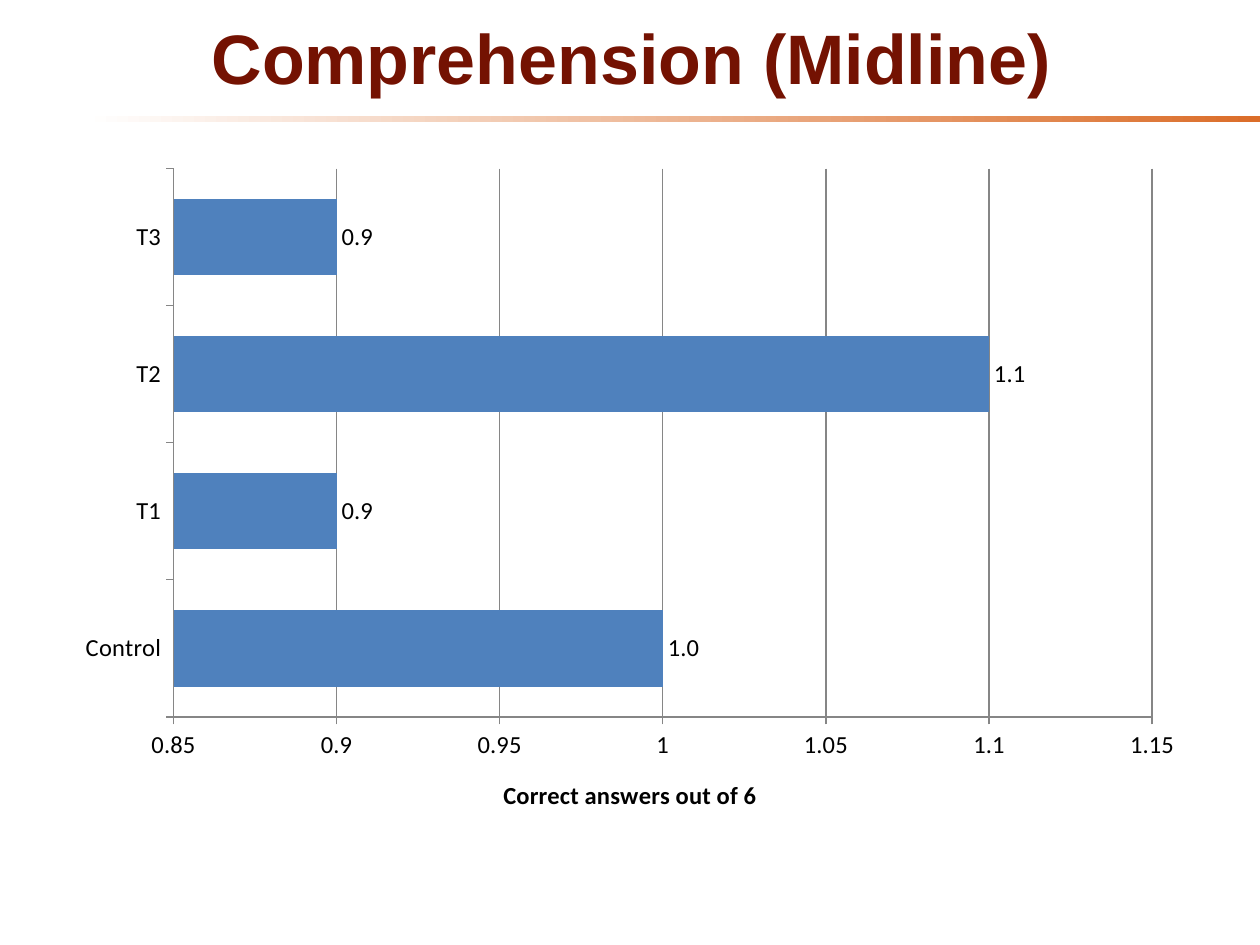
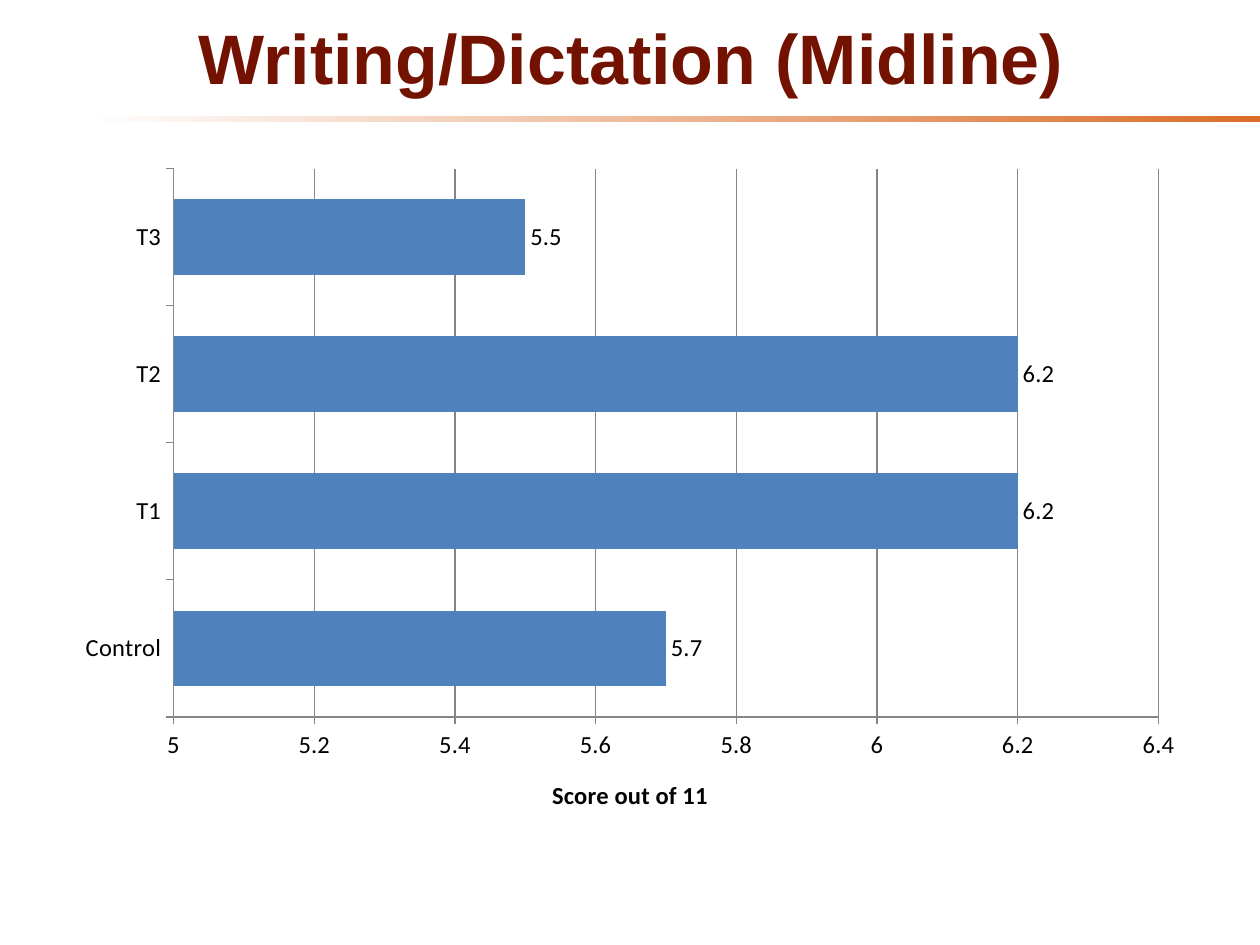
from pptx import Presentation
from pptx.chart.data import CategoryChartData
from pptx.dml.color import RGBColor
from pptx.enum.chart import XL_CHART_TYPE, XL_LABEL_POSITION, XL_TICK_MARK
from pptx.enum.shapes import MSO_SHAPE
from pptx.enum.text import MSO_ANCHOR, MSO_AUTO_SIZE, PP_ALIGN
from pptx.util import Inches, Pt

GROUPS = ["Control", "T1", "T2", "T3"]
RESULTS = [
    {
        "title": "Comprehension (Midline)",
        "measure": "Correct answers out of 6",
        "scores": [1.0, 0.9, 1.1, 0.9],
        "scale": (0.85, 1.15, 0.05),
        "gap": 80,
    },
    {
        "title": "Writing/Dictation (Midline)",
        "measure": "Score out of 11",
        "scores": [5.7, 6.2, 6.2, 5.5],
        "scale": (5, 6.4, 0.2),
        "gap": 81,
    },
]

MAROON, ORANGE, WHITE = "741202", "DB6D29", "FFFFFF"
BAR_BLUE, AXIS_GRAY, BLACK = "4F81BD", "868686", "000000"
TITLE_BOX = (0.51, 0.05, 9, 0.79)
BAND_BOX = (0.67, 0.92, 9.33, 0.05)
CHART_BOX = (0.5, 1.23, 9, 5.43)


def color(hex_string):
    return RGBColor.from_string(hex_string)


def box(lengths):
    return [Inches(length) for length in lengths]


def style_font(font, name, size, hex_string, bold=False):
    font.name = name
    font.size = Pt(size)
    font.bold = bold
    font.color.rgb = color(hex_string)


def style_line(line):
    line.color.rgb = color(AXIS_GRAY)
    line.width = Pt(0.75)


def add_heading(slide, wording):
    heading = slide.shapes.title
    heading.left, heading.top, heading.width, heading.height = box(TITLE_BOX)
    frame = heading.text_frame
    frame.text = wording
    frame.auto_size = MSO_AUTO_SIZE.NONE
    frame.vertical_anchor = MSO_ANCHOR.MIDDLE
    paragraph = frame.paragraphs[0]
    paragraph.alignment = PP_ALIGN.CENTER
    style_font(paragraph.runs[0].font, "Arial", 40, MAROON, bold=True)


def add_band(slide):
    band = slide.shapes.add_shape(MSO_SHAPE.RECTANGLE, *box(BAND_BOX))
    band.shadow.inherit = False
    band.line.fill.background()
    band.fill.gradient()
    band.fill.gradient_angle = 0
    for stop, shade in zip(band.fill.gradient_stops, (WHITE, ORANGE)):
        stop.color.rgb = color(shade)


def add_scores(slide, result):
    data = CategoryChartData(number_format="0.0")
    data.categories = GROUPS
    data.add_series("Series 1", result["scores"])
    chart = slide.shapes.add_chart(
        XL_CHART_TYPE.BAR_CLUSTERED, *box(CHART_BOX), data
    ).chart
    chart.has_legend = False
    chart.has_title = False
    style_font(chart.font, "Calibri", 14, BLACK)

    for axis in (chart.category_axis, chart.value_axis):
        axis.major_tick_mark = XL_TICK_MARK.OUTSIDE
        axis.minor_tick_mark = XL_TICK_MARK.NONE
        style_line(axis.format.line)
    chart.category_axis.has_major_gridlines = False

    score_axis = chart.value_axis
    score_axis.minimum_scale, score_axis.maximum_scale, score_axis.major_unit = result["scale"]
    score_axis.tick_labels.number_format = "General"
    score_axis.tick_labels.number_format_is_linked = False
    score_axis.has_major_gridlines = True
    style_line(score_axis.major_gridlines.format.line)
    measure = score_axis.axis_title.text_frame
    measure.text = result["measure"]
    style_font(measure.paragraphs[0].runs[0].font, "Calibri", 14, BLACK, bold=True)

    plot = chart.plots[0]
    plot.gap_width = result["gap"]
    plot.vary_by_categories = False
    bars = plot.series[0]
    bars.format.fill.solid()
    bars.format.fill.fore_color.rgb = color(BAR_BLUE)
    labels = bars.data_labels
    labels.show_value = True
    labels.number_format = "#,##0.0"
    labels.number_format_is_linked = False
    labels.position = XL_LABEL_POSITION.OUTSIDE_END
    style_font(labels.font, "Calibri", 14, BLACK)


def main():
    deck = Presentation()
    deck.slide_width, deck.slide_height = Inches(10), Inches(7.5)
    title_only = deck.slide_layouts[5]
    for result in RESULTS:
        slide = deck.slides.add_slide(title_only)
        slide.background.fill.solid()
        slide.background.fill.fore_color.rgb = color(WHITE)
        add_band(slide)
        add_heading(slide, result["title"])
        add_scores(slide, result)
    deck.save("out.pptx")


if __name__ == "__main__":
    main()
